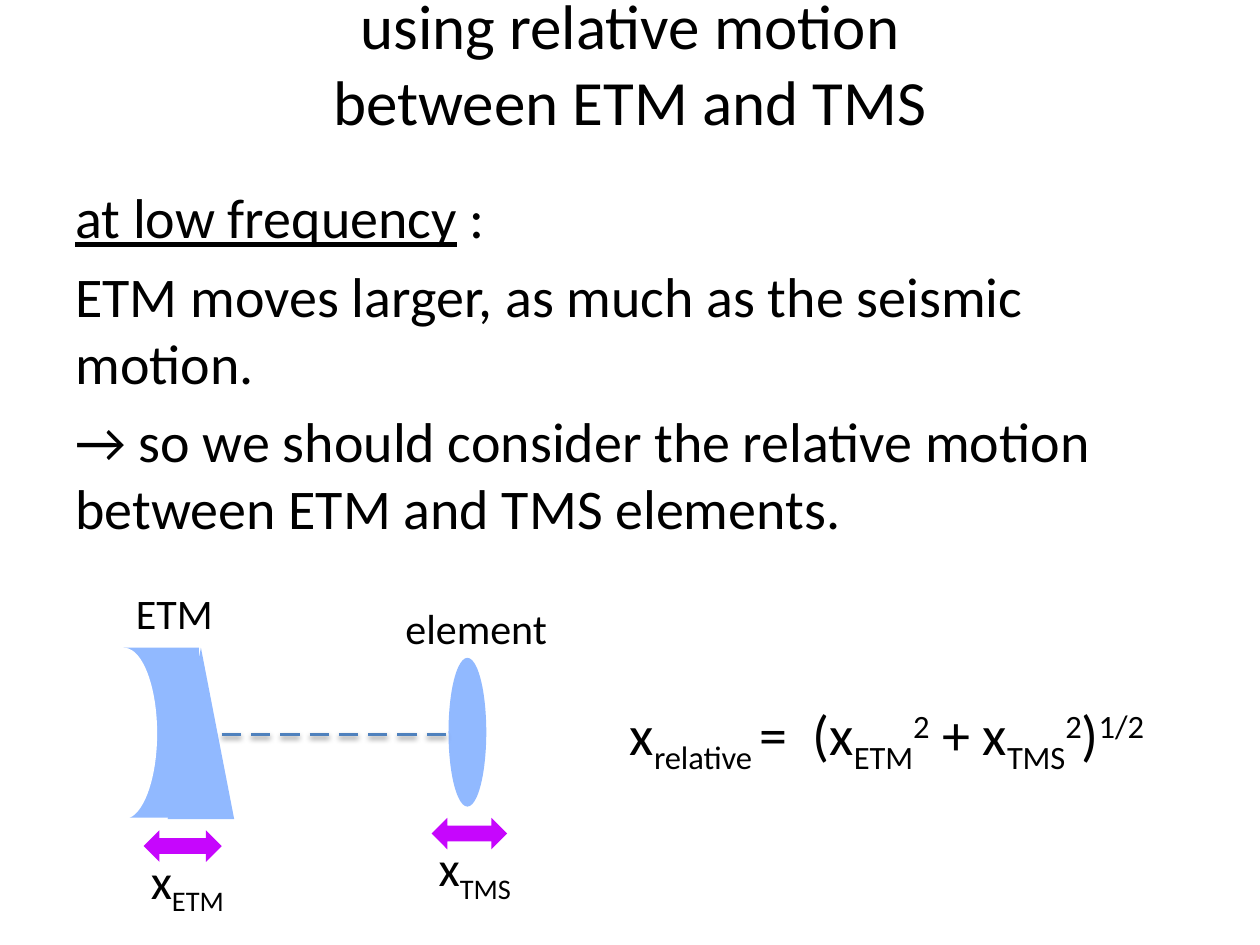
from collections import namedtuple

from lxml import etree
from pptx import Presentation
from pptx.dml.color import RGBColor
from pptx.enum.shapes import MSO_CONNECTOR, MSO_SHAPE
from pptx.enum.text import MSO_ANCHOR, MSO_AUTO_SIZE, PP_ALIGN
from pptx.oxml.ns import qn
from pptx.util import Pt

Box = namedtuple("Box", "left top width height")

BLACK = RGBColor(0x00, 0x00, 0x00)
WHITE = RGBColor(0xFF, 0xFF, 0xFF)
GLASS = RGBColor(0x91, 0xB9, 0xFF)
PURPLE = RGBColor(0xC6, 0x06, 0xFD)
BLUE = RGBColor(0x4F, 0x81, 0xBD)

STRAIGHT = MSO_CONNECTOR.STRAIGHT
TRIANGLE = MSO_SHAPE.ISOSCELES_TRIANGLE
RECTANGLE = MSO_SHAPE.RECTANGLE
OVAL = MSO_SHAPE.OVAL
DOUBLE_ARROW = MSO_SHAPE.LEFT_RIGHT_ARROW
TOP, MIDDLE = MSO_ANCHOR.TOP, MSO_ANCHOR.MIDDLE
LEFT, CENTER = PP_ALIGN.LEFT, PP_ALIGN.CENTER
FIT_SHAPE = MSO_AUTO_SIZE.SHAPE_TO_FIT_TEXT
NO_FIT = MSO_AUTO_SIZE.NONE

FONT = "Calibri"
SUB, SUPER = -25, 30


def inside(box, left, top, width, height):
    return Box(box.left + left, box.top + top, width, height)


def add_text(page, box, paragraphs, size, align=LEFT, anchor=TOP,
             wrap=False, space_before=0):
    frame = page.shapes.add_textbox(*map(Pt, box)).text_frame
    frame.word_wrap = wrap
    frame.auto_size = NO_FIT if wrap else FIT_SHAPE
    frame.vertical_anchor = anchor
    for index, spans in enumerate(paragraphs):
        para = frame.paragraphs[0] if index == 0 else frame.add_paragraph()
        para.alignment = align
        para.space_before = Pt(space_before)
        for text, style in spans:
            if text == "\n":
                para.add_line_break()
                continue
            span = para.add_run()
            span.text = text
            span.font.name = FONT
            span.font.size = Pt(size)
            span.font.color.rgb = BLACK
            if style == "underline":
                span.font.underline = True
            elif style:
                span.font._element.set("baseline", str(style * 1000))


def add_figure(page, kind, box, color):
    shape = page.shapes.add_shape(kind, *map(Pt, box))
    shape.shadow.inherit = False
    shape.fill.solid()
    shape.fill.fore_color.rgb = color
    shape.line.fill.background()


def add_title(page, box):
    spans = [("using relative motion", None), ("\n", None),
             ("between ETM and TMS", None)]
    add_text(page, box, [spans], 36, align=CENTER, anchor=MIDDLE, wrap=True)


def add_body(page, box):
    paragraphs = [
        [("at low frequency", "underline"), (" :", None)],
        [("ETM moves larger, as much as the seismic motion.", None)],
        [("→ so we should consider the relative motion "
          "between ETM and TMS elements.", None)],
    ]
    add_text(page, box, paragraphs, 32, wrap=True, space_before=6.4)


def add_formula(page, box):
    spans = [("x", None), ("relative ", SUB), ("=  (x", None), ("ETM", SUB),
             ("2", SUPER), (" + x", None), ("TMS", SUB), ("2", SUPER),
             (")", None), ("1/2", SUPER)]
    add_text(page, box, [spans], 32)


def add_displacement(page, box, name):
    add_figure(page, DOUBLE_ARROW, inside(box, 3, 0, box.width, 18), PURPLE)
    add_text(page, inside(box, 0, 7.9, 61, 41),
             [[("x", None), (name, SUB)]], 28)


def add_mirror(page, box):
    add_figure(page, TRIANGLE, inside(box, 44, 38.2, 38, 98), GLASS)
    add_figure(page, RECTANGLE, inside(box, 18.8, 38.2, 43, 97.2), GLASS)
    add_figure(page, OVAL, inside(box, 0, 38.2, 38, 98), WHITE)
    add_text(page, inside(box, 18.8, 0, 59, 36), [[("ETM", None)]], 24)
    add_displacement(page, inside(box, 27.3, 142.6, 44.6, 48.9), "ETM")


def add_element(page, box):
    add_figure(page, OVAL, inside(box, 31.7, 35.3, 21.6, 85), GLASS)
    add_text(page, inside(box, 0, 0, 96.5, 36), [[("element", None)]], 24)
    add_displacement(page, inside(box, 19, 126.7, 43.2, 48.9), "TMS")


def add_shadow(line):
    effects = etree.SubElement(line._element.spPr, qn("a:effectLst"))
    shadow = etree.SubElement(effects, qn("a:outerShdw"), blurRad=str(Pt(3.1)),
                              dist=str(Pt(1.6)), dir="5400000", rotWithShape="0")
    color = etree.SubElement(shadow, qn("a:srgbClr"), val=str(BLACK))
    etree.SubElement(color, qn("a:alpha"), val="38000")


def add_beam(page, box, count=8, dash=11):
    step = (box.width - dash) / (count - 1)
    for index in range(count):
        start = box.left + index * step
        line = page.shapes.add_connector(
            STRAIGHT, Pt(start), Pt(box.top), Pt(start + dash), Pt(box.top))
        line.line.color.rgb = BLUE
        line.line.width = Pt(2)
        add_shadow(line)


def main():
    deck = Presentation()
    deck.slide_width, deck.slide_height = Pt(720), Pt(540)
    page = deck.slides.add_slide(deck.slide_layouts[6])
    add_body(page, Box(36, 100.8, 648, 356.4))
    add_title(page, Box(36, -9.4, 648, 90))
    add_formula(page, Box(352.8, 396, 338.4, 46))
    add_mirror(page, Box(51.8, 331.9, 86, 192))
    add_element(page, Box(224.6, 340.6, 96.5, 176))
    add_beam(page, Box(126.7, 419.8, 128.2, 0))
    deck.save("out.pptx")


if __name__ == "__main__":
    main()
